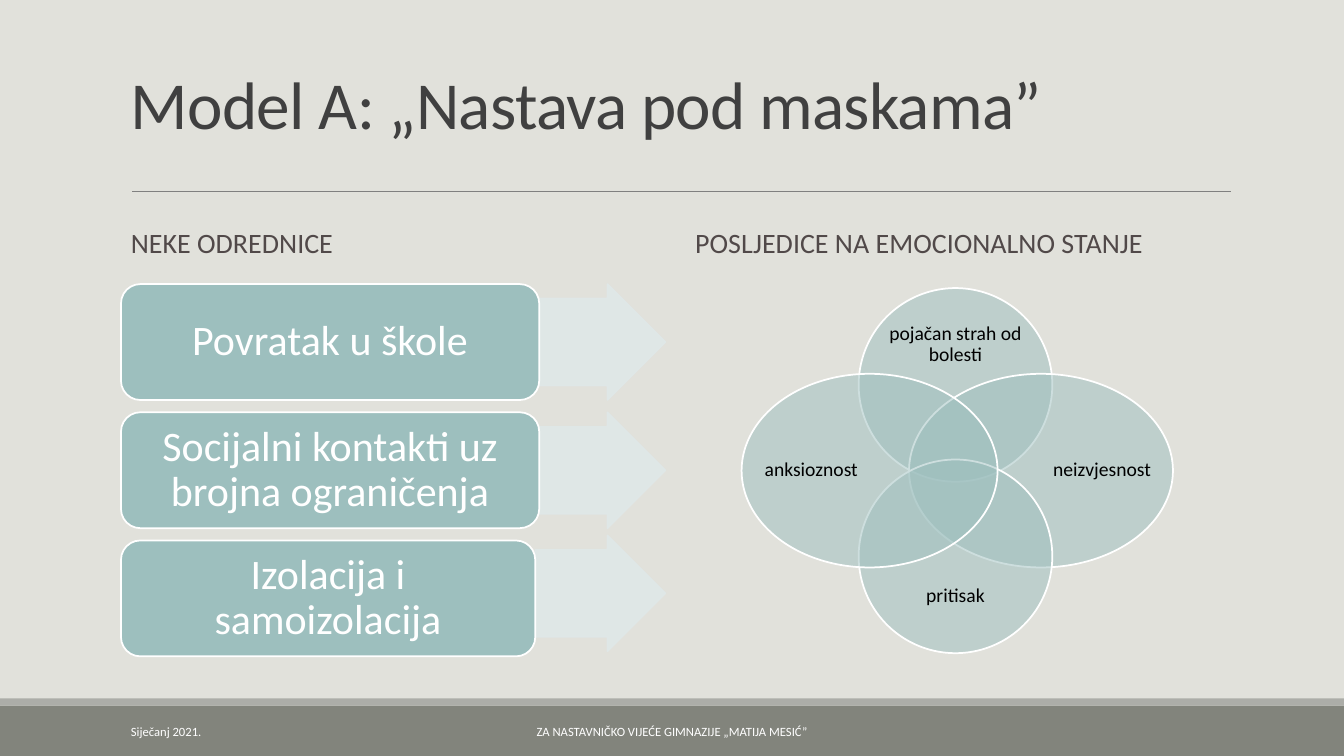
from lxml.etree import SubElement
from pptx import Presentation
from pptx.dml.color import RGBColor
from pptx.enum.shapes import MSO_CONNECTOR, MSO_SHAPE
from pptx.enum.text import MSO_ANCHOR, PP_ALIGN
from pptx.oxml.ns import qn
from pptx.util import Cm, Pt

COLORS = {
    "background": "E1E1DB", "bar": "82847C", "strip": "ACADA8", "rule": "808080",
    "title": "404040", "heading": "514949", "teal": "9DBFBE", "arrow": "DFE8E8",
    "white": "FFFFFF", "black": "000000",
}
WIDTH, HEIGHT = 33.87, 19.05


def rgb(name):
    """Return the named palette colour."""
    return RGBColor.from_string(COLORS[name])


def write(tf, text, size=14, color="black", align=PP_ALIGN.LEFT, anchor=MSO_ANCHOR.MIDDLE,
          insets=(0.25, 0.13), spacing=None, before=0, after=0, tracking=None):
    """Fill a text frame with one formatted paragraph."""
    tf.word_wrap = True
    tf.vertical_anchor = anchor
    tf.margin_left = tf.margin_right = Cm(insets[0])
    tf.margin_top = tf.margin_bottom = Cm(insets[1])
    p = tf.paragraphs[0]
    p.alignment = align
    p.line_spacing = spacing
    p.space_before, p.space_after = Pt(before), Pt(after)
    r = p.add_run()
    r.text = text
    r.font.name = "Calibri"
    r.font.size = Pt(size)
    r.font.color.rgb = rgb(color)
    if tracking is not None:
        r.font._element.set("spc", str(round(tracking * 100)))


class SlideBuilder:
    """Draw styled elements on the current slide."""

    def __init__(self, s):
        """Keep the slide and paint its background."""
        self.s = s
        s.background.fill.solid()
        s.background.fill.fore_color.rgb = rgb("background")

    def shape(self, kind, box, fill, line=None, alpha=None, line_alpha=None):
        """Add a filled preset shape."""
        sp = self.s.shapes.add_shape(kind, *map(Cm, box))
        sp.shadow.inherit = False
        sp.fill.solid()
        sp.fill.fore_color.rgb = rgb(fill)
        if line:
            sp.line.color.rgb = rgb(line)
            sp.line.width = Pt(1.25)
        else:
            sp.line.fill.background()
        spPr = sp._element.spPr
        for parent, percent in ((spPr, alpha), (spPr.find(qn("a:ln")), line_alpha)):
            if percent:
                clr = parent.find(qn("a:solidFill")).find(qn("a:srgbClr"))
                SubElement(clr, qn("a:alpha")).set("val", str(percent * 1000))
        return sp

    def text(self, box, text, **fmt):
        """Add a text box."""
        write(self.s.shapes.add_textbox(*map(Cm, box)).text_frame, text, **fmt)

    def rule(self, left, right, top):
        """Add a thin horizontal line."""
        c = self.s.shapes.add_connector(MSO_CONNECTOR.STRAIGHT, Cm(left), Cm(top), Cm(right), Cm(top))
        c.line.color.rgb = rgb("rule")
        c.line.width = Pt(0.5)
        SubElement(c._element.spPr, qn("a:effectLst"))

    def step(self, top, width, arrow_top, text):
        """Add a rounded box with the arrow behind it."""
        left, height, tip = 3.05, 2.92, 16.77
        start = left + width
        sp = self.shape(MSO_SHAPE.RIGHT_ARROW, (start, arrow_top, tip - start, height),
                        "arrow", "arrow", alpha=90, line_alpha=90)
        sp.adjustments[0] = 0.75
        sp = self.shape(MSO_SHAPE.ROUNDED_RECTANGLE, (left, top, width, height), "teal", "white")
        write(sp.text_frame, text, size=30, color="white", align=PP_ALIGN.CENTER,
              insets=(0.3, 0.15), spacing=0.9)

    def petal(self, box, label_box, text):
        """Add a translucent ellipse and its label."""
        self.shape(MSO_SHAPE.OVAL, box, "teal", "white", alpha=50)
        self.text(label_box, text, align=PP_ALIGN.CENTER, insets=(0, 0), spacing=0.9)


def main():
    """Build and save the slide."""
    prs = Presentation()
    prs.slide_width, prs.slide_height = Cm(WIDTH), Cm(HEIGHT)
    b = SlideBuilder(prs.slides.add_slide(prs.slide_layouts[6]))

    b.shape(MSO_SHAPE.RECTANGLE, (0, 17.78, WIDTH, 1.27), "bar")
    b.shape(MSO_SHAPE.RECTANGLE, (0, 17.6, WIDTH, 0.18), "strip")
    b.rule(3.33, 31.01, 4.83)
    b.text((3.05, 0.79, 27.94, 2.95), "Model A: „Nastava pod maskama”", size=48, color="title",
           anchor=MSO_ANCHOR.BOTTOM, spacing=0.85, tracking=-0.5)
    for left, heading in ((3.05, "NEKE ODREDNICE"), (17.27, "POSLJEDICE NA EMOCIONALNO STANJE")):
        b.text((left, 5.13, 13.72, 2.06), heading, size=20, color="heading",
               spacing=0.9, before=12, after=2)

    steps = (
        ("Povratak u škole", 10.54, 0),
        ("Socijalni kontakti uz brojna ograničenja", 10.54, 0),
        ("Izolacija i samoizolacija", 10.44, 0.13),
    )
    for i, (text, width, lift) in enumerate(steps):
        top = 7.16 + 3.23 * i
        b.step(top, width, top - lift, text)

    petals = (
        ((21.64, 7.26, 4.88, 4.88), (22.2, 7.92, 3.76, 1.55), "pojačan strah od bolesti"),
        ((22.91, 9.42, 6.65, 4.88), (26.49, 9.98, 2.57, 3.76), "neizvjesnost"),
        ((21.64, 11.58, 4.88, 4.88), (22.2, 14.25, 3.76, 1.55), "pritisak"),
        ((18.69, 9.42, 6.45, 4.88), (19.2, 9.98, 2.49, 3.76), "anksioznost"),
    )
    for petal in petals:
        b.petal(*petal)

    b.text((3.05, 17.93, 6.86, 1.02), "Siječanj 2021.", size=9, color="white")
    b.text((10.24, 17.93, 13.39, 1.02), "ZA NASTAVNIČKO VIJEĆE GIMNAZIJE „MATIJA MESIĆ”",
           size=9, color="white", align=PP_ALIGN.CENTER)
    prs.save("out.pptx")


if __name__ == "__main__":
    main()
